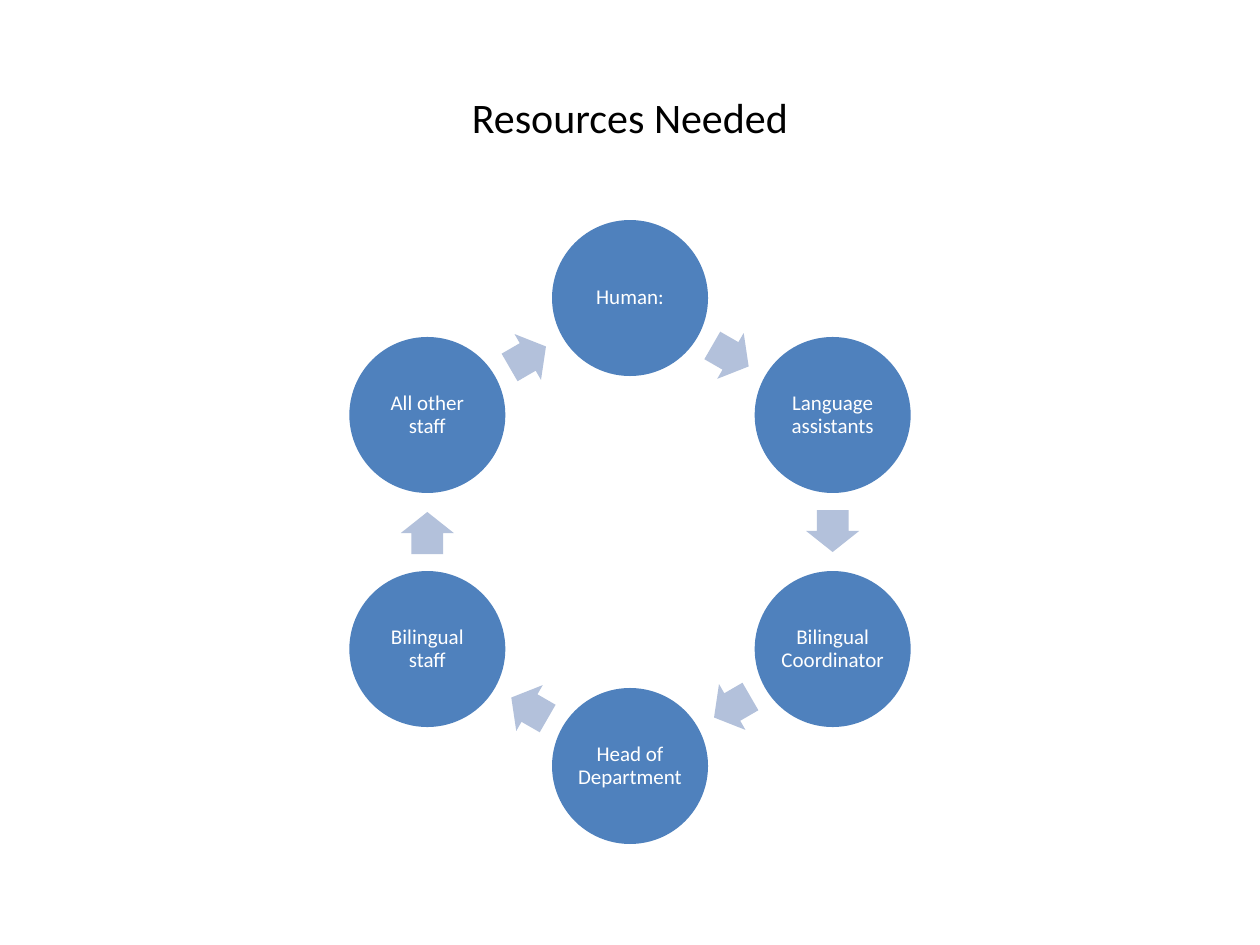
import dataclasses
import math

import pptx
import pptx.dml.color
import pptx.enum.shapes
import pptx.enum.text
import pptx.util

SHAPES = pptx.enum.shapes.MSO_SHAPE
EMU_PER_PX = 914400 / 126


@dataclasses.dataclass(frozen=True)
class Theme:
    font: str = "Calibri"
    title_size: int = 24
    label_size: int = 12
    title_color: str = "000000"
    label_color: str = "FFFFFF"
    node_fill: str = "4F81BD"
    arrow_fill: str = "B3C1DB"


def px(length):
    return pptx.util.Emu(round(length * EMU_PER_PX))


def rgb(value):
    return pptx.dml.color.RGBColor.from_string(value)


def write_text(frame, text, *, font, size, color, spacing=1.0, inset=None):
    frame.word_wrap = True
    frame.vertical_anchor = pptx.enum.text.MSO_ANCHOR.MIDDLE
    if inset is not None:
        frame.margin_left = frame.margin_right = px(inset)
        frame.margin_top = frame.margin_bottom = px(inset)
    para = frame.paragraphs[0]
    para.alignment = pptx.enum.text.PP_ALIGN.CENTER
    para.line_spacing = spacing
    span = para.add_run()
    span.text = text
    span.font.name = font
    span.font.size = pptx.util.Pt(size)
    span.font.color.rgb = rgb(color)


class SlideBuilder:
    def __init__(self, deck, theme):
        self.theme = theme
        self.page = deck.slides.add_slide(deck.slide_layouts[5])

    def title(self, text, left, top, width, height):
        box = self.page.shapes.title
        box.left, box.top = px(left), px(top)
        box.width, box.height = px(width), px(height)
        write_text(box.text_frame, text, font=self.theme.font,
                   size=self.theme.title_size, color=self.theme.title_color)

    def centered_shape(self, kind, x, y, width, height, fill):
        shape = self.page.shapes.add_shape(
            kind, px(x - width / 2), px(y - height / 2), px(width), px(height))
        shape.shadow.inherit = False
        shape.fill.solid()
        shape.fill.fore_color.rgb = rgb(fill)
        shape.line.fill.background()
        return shape

    def node(self, text, x, y, diameter):
        circle = self.centered_shape(
            SHAPES.OVAL, x, y, diameter, diameter, self.theme.node_fill)
        write_text(circle.text_frame, text, font=self.theme.font,
                   size=self.theme.label_size, color=self.theme.label_color,
                   spacing=0.9, inset=2)

    def arrow(self, x, y, width, height, rotation):
        arrow = self.centered_shape(
            SHAPES.RIGHT_ARROW, x, y, width, height, self.theme.arrow_fill)
        arrow.adjustments[0] = 0.6
        arrow.adjustments[1] = 0.5
        arrow.rotation = rotation

    def cycle(self, labels, center_x, center_y, radius, diameter):
        step = 360 / len(labels)
        arrow_radius = radius * math.cos(math.radians(step / 2))
        for index, label in enumerate(labels):
            angle = math.radians(index * step - 90)
            self.node(label, center_x + radius * math.cos(angle),
                      center_y + radius * math.sin(angle), diameter)
            middle = angle + math.radians(step / 2)
            self.arrow(center_x + arrow_radius * math.cos(middle) + math.sin(middle),
                       center_y + arrow_radius * math.sin(middle) - math.cos(middle),
                       42, 53, (index + 0.5) * step)


def main():
    deck = pptx.Presentation()
    deck.slide_width, deck.slide_height = px(1260), px(945)
    builder = SlideBuilder(deck, Theme())
    builder.title("Resources Needed", 63, 38, 1134, 157)
    builder.cycle(
        ["Human:", "Language assistants", "Bilingual Coordinator",
         "Head of Department", "Bilingual staff", "All other staff"],
        center_x=630, center_y=532, radius=234, diameter=156)
    deck.save("out.pptx")


if __name__ == "__main__":
    main()
